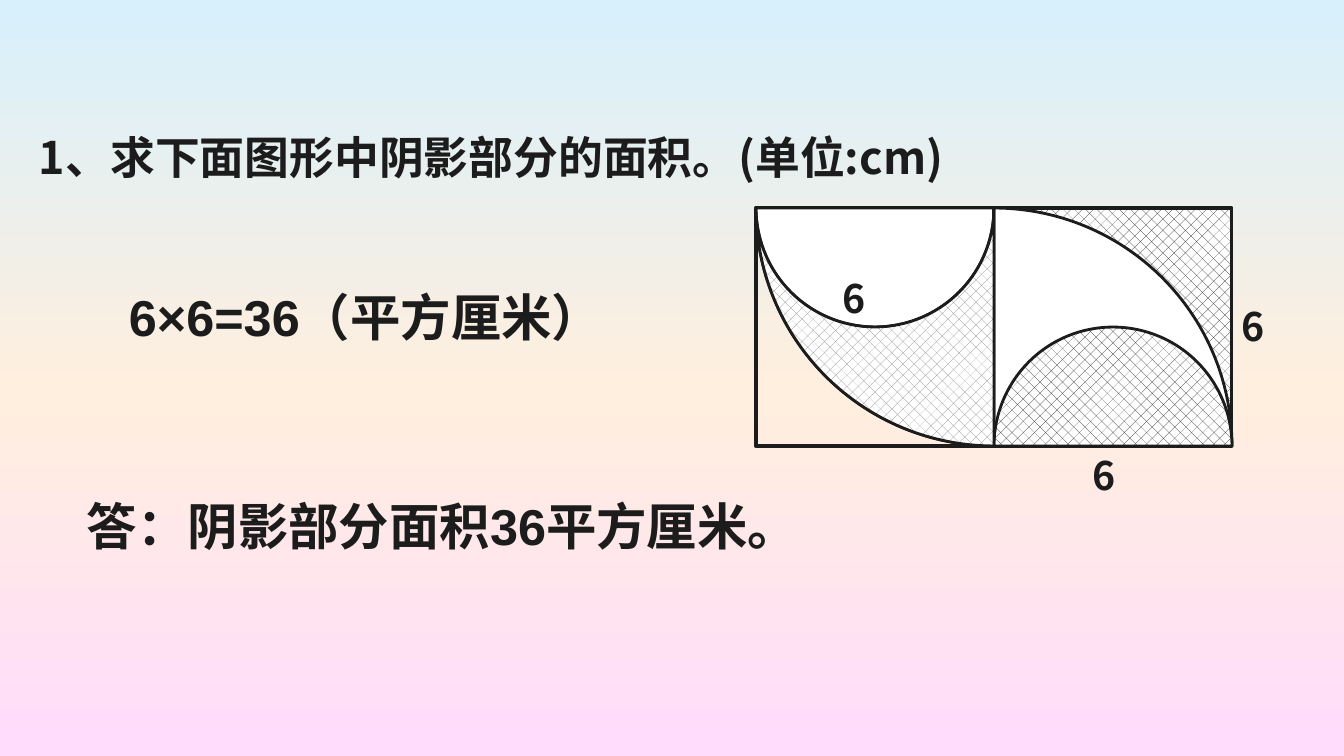
from copy import deepcopy
from math import cos, pi, sin

from pptx import Presentation
from pptx.dml.color import RGBColor
from pptx.enum.dml import MSO_PATTERN as Pattern
from pptx.enum.shapes import MSO_SHAPE as Shape
from pptx.enum.text import MSO_AUTO_SIZE as AutoSize
from pptx.oxml.ns import qn
from pptx.util import Pt

INK = RGBColor(0x1C, 0x1C, 0x1C)
GREY = RGBColor(0x84, 0x84, 0x84)
WHITE = RGBColor(0xFF, 0xFF, 0xFF)
SKY = RGBColor(0xD7, 0xF0, 0xFC)
CREAM = RGBColor(0xFF, 0xEF, 0xDE)
PINK = RGBColor(0xFF, 0xDC, 0xFC)

CJK = "Noto Sans CJK SC"
PX = 914400 / 100.8
BACKGROUND = [(0, SKY), (0.52, CREAM), (1, PINK)]

QUESTION = ("1、求下面图形中阴影部分的面积。(单位:cm)", 29, 125, 1239, 65)
SIDE_LABELS = [
    ("6", 833, 269, 84, 57),
    ("6", 1232, 297, 36, 57),
    ("6", 1083, 446, 50, 57),
]
ANSWERS = [
    ("6×6=36（平方厘米）", 119, 281, 525, 72),
    ("答：阴影部分面积36平方厘米。", 77, 490, 768, 72),
]

SIDE = 238
HALF = SIDE // 2
LEFT, TOP = 756, 208
MIDDLE, BOTTOM = LEFT + SIDE, TOP + SIDE
QUARTER = (54, 108)
SEMICIRCLE = (0, 108)
ARC_STEPS = 60


def emu(length):
    return round(length * PX)


def style(shape, fill=None, hatch=None, weight=2):
    shape.shadow.inherit = False
    if hatch is not None:
        shape.fill.patterned()
        shape.fill.pattern = Pattern.PERCENT_25
        shape.fill.fore_color.rgb = hatch
        shape.fill.back_color.rgb = WHITE
    elif fill is not None:
        shape.fill.solid()
        shape.fill.fore_color.rgb = fill
    else:
        shape.fill.background()
    shape.line.color.rgb = INK
    shape.line.width = Pt(weight)


def add_figure(kind, left, top, size, angles=(), rotation=0, **look):
    shape = page.shapes.add_shape(kind, emu(left), emu(top), emu(size), emu(size))
    for index, angle in enumerate(angles):
        shape.adjustments[index] = angle
    shape.rotation = rotation
    style(shape, **look)


def add_text(text, left, top, width, height, size=28, font=CJK):
    box = page.shapes.add_textbox(emu(left), emu(top), emu(width), emu(height))
    box.text_frame.word_wrap = True
    box.text_frame.auto_size = AutoSize.SHAPE_TO_FIT_TEXT
    span = box.text_frame.paragraphs[0].add_run()
    span.text = text
    span.font.name = font
    span.font.size = Pt(size)
    span.font.bold = True
    span.font.color.rgb = INK
    east_asian = span.font._element.makeelement(qn("a:ea"), {"typeface": CJK})
    span.font._element.append(east_asian)


def arc(center_x, radius, start, end):
    angles = [start + (end - start) * step / ARC_STEPS for step in range(ARC_STEPS + 1)]
    return [(emu(center_x + radius * cos(a)), emu(TOP + radius * sin(a))) for a in angles]


def paint_background():
    fill = page.background.fill
    fill.gradient()
    fill.gradient_angle = 270
    stop_list = next(page.element.iter(qn("a:gsLst")))
    stop_list.append(deepcopy(stop_list[-1]))
    for stop, (position, color) in zip(fill.gradient_stops, BACKGROUND):
        stop.position = position
        stop.color.rgb = color


deck = Presentation()
deck.slide_width, deck.slide_height = emu(1344), emu(756)
page = deck.slides.add_slide(deck.slide_layouts[6])
paint_background()

add_text(*QUESTION, size=32)

add_figure(Shape.RECTANGLE, LEFT, TOP, SIDE, weight=3)
add_figure(Shape.PIE, LEFT, TOP - SIDE, 2 * SIDE, QUARTER, hatch=GREY)
add_figure(Shape.PIE, LEFT, TOP - HALF, SIDE, SEMICIRCLE, fill=WHITE)
add_figure(Shape.RECTANGLE, MIDDLE, TOP, SIDE, hatch=INK, weight=2.25)
add_figure(Shape.PIE, LEFT, TOP, 2 * SIDE, QUARTER, 180, fill=WHITE)
add_figure(Shape.PIE, MIDDLE, TOP + HALF, SIDE, SEMICIRCLE, 180, hatch=INK)

for label in SIDE_LABELS:
    add_text(*label)

outline = arc(LEFT + HALF, HALF, pi, 0) + arc(MIDDLE, SIDE, pi / 2, pi)
builder = page.shapes.build_freeform(*outline[0])
builder.add_line_segments(outline[1:], close=True)
style(builder.convert_to_shape(), hatch=GREY)

for answer in ANSWERS:
    add_text(*answer, size=36, font="Arial")

deck.save("out.pptx")
